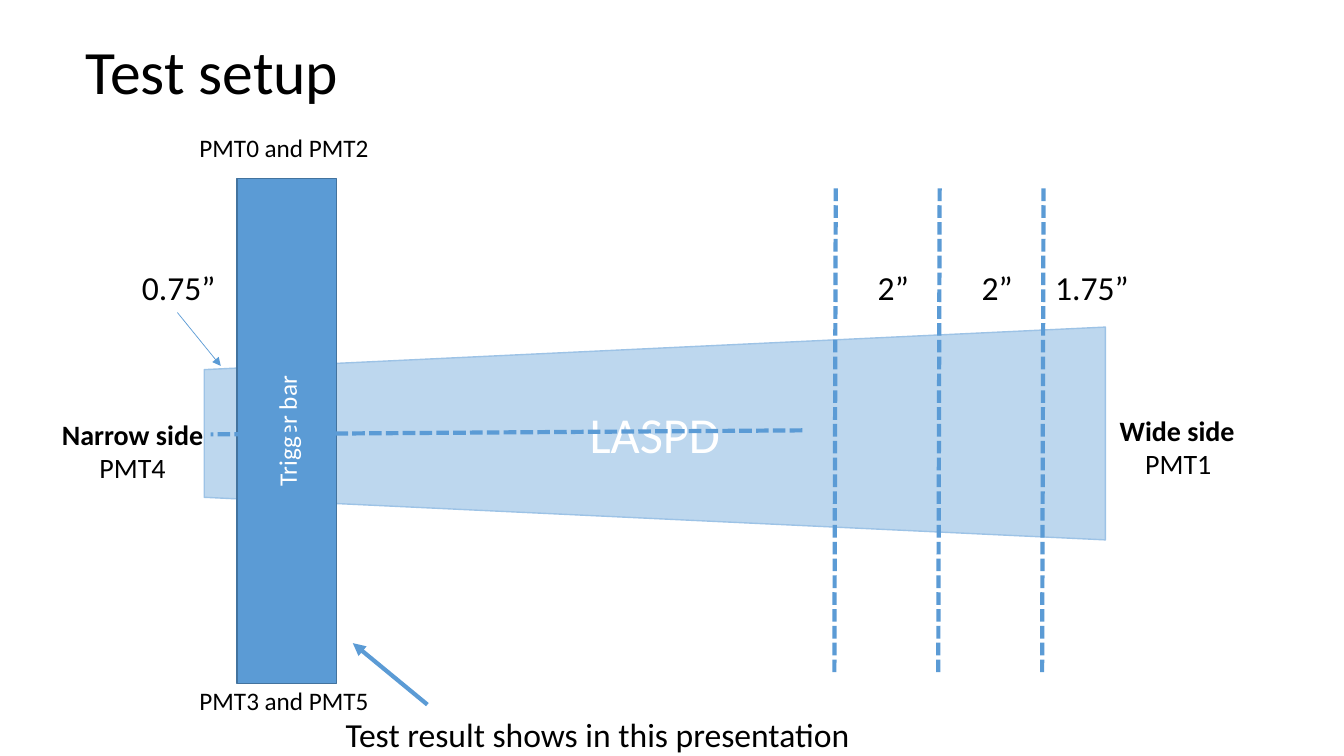
from pptx import Presentation
from pptx.dml.color import RGBColor
from pptx.enum.dml import MSO_LINE_DASH_STYLE as Dash
from pptx.enum.shapes import MSO_CONNECTOR_TYPE as Link, MSO_SHAPE as Form
from pptx.enum.text import MSO_ANCHOR as Anchor, MSO_AUTO_SIZE as Fit, PP_ALIGN as Align
from pptx.oxml.ns import qn
from pptx.util import Pt
from lxml.etree import SubElement as Sub

BLACK = RGBColor(0x00, 0x00, 0x00)
WHITE = RGBColor(0xFF, 0xFF, 0xFF)
BLUE = RGBColor(0x5B, 0x9B, 0xD5)
NAVY = RGBColor(0x43, 0x73, 0x9E)
PALE = RGBColor(0xBD, 0xD7, 0xEE)
SKY = RGBColor(0x9D, 0xC3, 0xE6)


def put(frame, text, size=24, color=BLACK, bold=False, align=Align.LEFT, font="Calibri"):
    para = frame.paragraphs[0]
    if para.runs:
        para = frame.add_paragraph()
    para.alignment = align
    run = para.add_run()
    run.text = text
    run.font.name = font
    run.font.size = Pt(size)
    run.font.bold = bold
    run.font.color.rgb = color
    return para


class Sketch:
    """Draws the parts of the test setup on one slide."""

    def __init__(self, slide):
        self.shapes = slide.shapes

    def label(self, box, text=None, fit=Fit.SHAPE_TO_FIT_TEXT, **style):
        frame = self.shapes.add_textbox(*map(Pt, box)).text_frame
        frame.word_wrap = True
        frame.auto_size = fit
        if text:
            put(frame, text, **style)
        return frame

    def title(self, box, text):
        frame = self.label(box, fit=Fit.NONE)
        frame.vertical_anchor = Anchor.MIDDLE
        put(frame, text, size=44).line_spacing = 0.9

    def side(self, box, name, tube, align):
        frame = self.label(box)
        put(frame, name, size=20, bold=True, align=align)
        put(frame, tube, size=20, align=Align.CENTER)

    def block(self, form, box, text, fill, edge, size, turn=0):
        shape = self.shapes.add_shape(form, *map(Pt, box))
        shape.rotation = turn
        shape.shadow.inherit = False
        shape.fill.solid()
        shape.fill.fore_color.rgb = fill
        shape.line.color.rgb = edge
        shape.line.width = Pt(1)
        frame = shape.text_frame
        frame.vertical_anchor = Anchor.MIDDLE
        shape.element.txBody.find(qn("a:bodyPr")).set("vert", "vert270")
        put(frame, text, size=size, color=WHITE, align=Align.CENTER)

    def line(self, start, end, width=3, dash=None, arrow=False):
        link = self.shapes.add_connector(Link.STRAIGHT, *map(Pt, start + end))
        link.line.color.rgb = BLUE
        link.line.width = Pt(width)
        if dash:
            link.line.dash_style = dash
        props = link.element.spPr
        if arrow:
            Sub(props.find(qn("a:ln")), qn("a:tailEnd"), type="triangle")
        Sub(props, qn("a:effectLst"))


def main():
    deck = Presentation()
    deck.slide_width, deck.slide_height = Pt(960), Pt(540)
    art = Sketch(deck.slides.add_slide(deck.slide_layouts[6]))

    art.title((54, 0.7, 828, 104.4), "Test setup")
    art.block(Form.FLOWCHART_MANUAL_OPERATION, (391.7, -12.2, 152, 643.7),
              "LASPD", PALE, SKY, 36, turn=90)
    art.block(Form.RECTANGLE, (169.2, 127.6, 71.3, 360.7), "Trigger bar", BLUE, NAVY, 18)

    art.side((36, 294.5, 117.4, 55.4), "Narrow side", "PMT4", Align.CENTER)
    art.side((792.7, 291.6, 97.9, 55.4), "Wide side", "PMT1", Align.LEFT)

    for step in range(3):
        left = 597 + 74.2 * step
        art.line((left, 134.6), (left - 1, 480.2), dash=Dash.SQUARE_DOT)
    art.line((573.1, 307.4), (150.5, 310.3), dash=Dash.SQUARE_DOT)

    for left, gap in ((94.3, "0.75”"), (619.9, "2”"), (694.1, "2”"), (746.6, "1.75”")):
        art.label((left, 187.2, 95.8, 36), gap)
    art.line((126.7, 223.2), (157.7, 261.4), width=0.5, arrow=True)

    art.label((239.8, 506.2, 389.5, 36), "Test result shows in this presentation")
    art.line((305.3, 503.3), (252, 459.4), arrow=True)

    for top, tubes in ((90.7, "PMT0 and PMT2"), (486, "PMT3 and PMT5")):
        art.label((135.4, top, 169.9, 28.8), tubes, size=18)

    deck.save("out.pptx")


if __name__ == "__main__":
    main()
